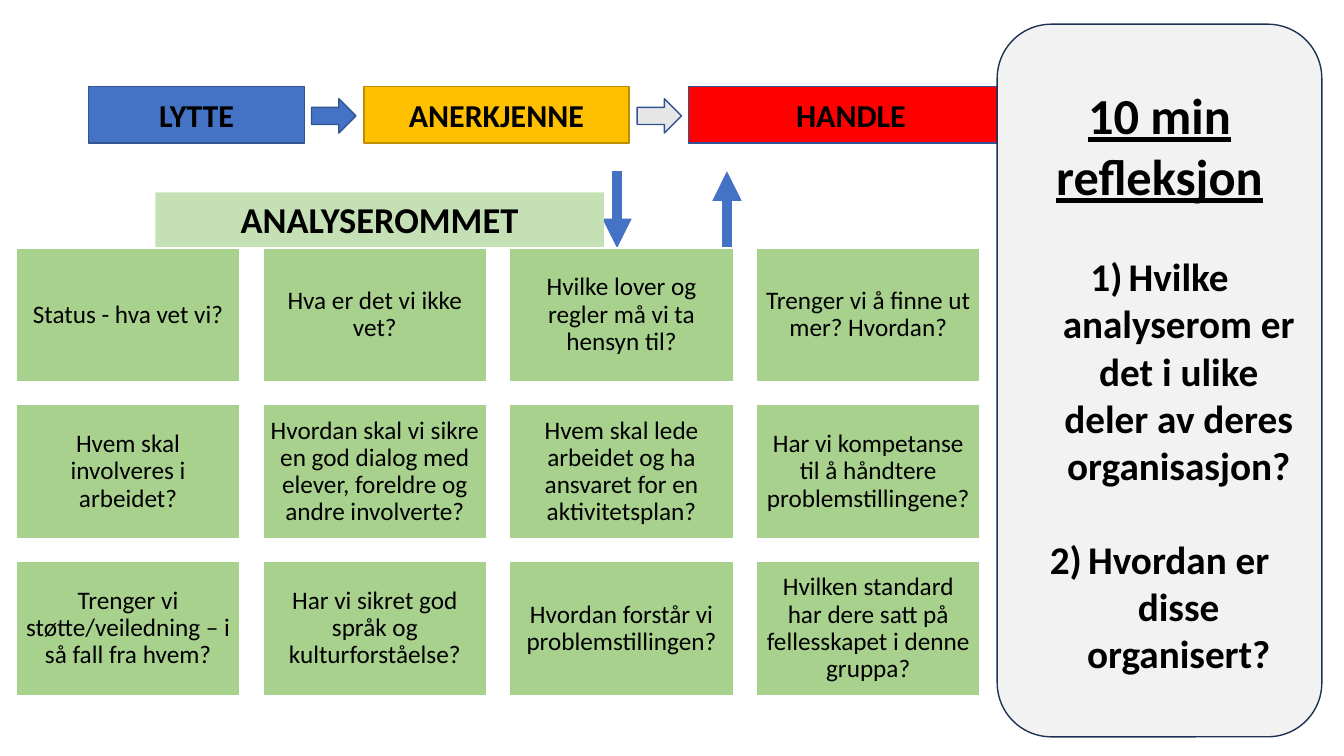
from dataclasses import dataclass

from lxml import etree
from pptx import Presentation
from pptx import util as u
from pptx.dml.color import RGBColor
from pptx.enum import shapes, text
from pptx.oxml import ns

BLACK = RGBColor(0x00, 0x00, 0x00)
WHITE = RGBColor(0xFF, 0xFF, 0xFF)
BLUE = RGBColor(0x44, 0x72, 0xC4)
DARK_BLUE = RGBColor(0x32, 0x54, 0x91)
NAVY = RGBColor(0x1E, 0x32, 0x56)
RED = RGBColor(0xFF, 0x00, 0x00)
AMBER = RGBColor(0xFF, 0xC0, 0x00)
DARK_AMBER = RGBColor(0xBD, 0x8E, 0x00)
GREY = RGBColor(0xE7, 0xE6, 0xE6)
PALE_GREY = RGBColor(0xF2, 0xF2, 0xF2)
GREEN = RGBColor(0xA9, 0xD1, 0x8E)
PALE_GREEN = RGBColor(0xC5, 0xE0, 0xB4)
FONT = "Calibri"
KIND = shapes.MSO_SHAPE


@dataclass
class Shape:
    kind: KIND
    left: float
    top: float
    width: float
    height: float
    fill: RGBColor
    line: RGBColor | None = None


@dataclass
class Step:
    label: str
    left: float
    width: float
    fill: RGBColor
    line: RGBColor


@dataclass
class Arrow:
    x: float
    start: float
    end: float


STEPS = [
    Step("LYTTE", 0.88, 2.14, BLUE, DARK_BLUE),
    Step("HANDLE", 6.83, 3.22, RED, DARK_BLUE),
    Step("ANERKJENNE", 3.61, 2.63, AMBER, DARK_AMBER),
]
STEP_ARROWS = [
    Shape(KIND.RIGHT_ARROW, 3.09, 0.98, 0.44, 0.34, BLUE, DARK_BLUE),
    Shape(KIND.RIGHT_ARROW, 6.32, 0.98, 0.44, 0.34, GREY, DARK_BLUE),
]
ROOM_ARROWS = [Arrow(6.12, 1.7, 2.46), Arrow(7.21, 2.46, 1.7)]
QUESTIONS = [
    [
        "Status - hva vet vi?",
        "Hva er det vi ikke vet?",
        "Hvilke lover og regler må vi ta hensyn til?",
        "Trenger vi å finne ut mer? Hvordan?",
    ],
    [
        "Hvem skal involveres i arbeidet?",
        "Hvordan skal vi sikre en god dialog med elever, foreldre og andre involverte?",
        "Hvem skal lede arbeidet og ha ansvaret for en aktivitetsplan?",
        "Har vi kompetanse til å håndtere problemstillingene?",
    ],
    [
        "Trenger vi støtte/veiledning – i så fall fra hvem?",
        "Har vi sikret god språk og kulturforståelse?",
        "Hvordan forstår vi problemstillingen?",
        "Hvilken standard har dere satt på fellesskapet i denne gruppa?",
    ],
]
CARD_LEFT, CARD_TOP = 0.16, 2.46
CARD_WIDTH, CARD_HEIGHT = 2.22, 1.33
COLUMN_STEP, ROW_STEP = 2.447, 1.555
REFLECTIONS = [
    "Hvilke analyserom er det i ulike deler av deres organisasjon?",
    "Hvordan er disse organisert?",
]


def add_box(page, shape: Shape):
    box = page.shapes.add_shape(
        shape.kind, *map(u.Inches, (shape.left, shape.top, shape.width, shape.height))
    )
    box.shadow.inherit = False
    box.fill.solid()
    box.fill.fore_color.rgb = shape.fill
    if shape.line is None:
        box.line.fill.background()
    else:
        box.line.color.rgb = shape.line
        box.line.width = u.Pt(1)
    return box


def write(box, words: str, *, size: float, bold: bool = False, underline: bool = False,
          spacing: float = 1.0, before: float = 0, numbered: bool = False) -> None:
    """Fill the first paragraph of the box, or add one after existing text."""
    frame = box.text_frame
    frame.word_wrap = True
    para = frame.add_paragraph() if frame.text else frame.paragraphs[0]
    para.alignment = text.PP_ALIGN.CENTER
    para.line_spacing = spacing
    if before:
        para.space_before = u.Pt(before)
    if numbered:
        properties = para._p.get_or_add_pPr()
        properties.set("marL", str(u.Inches(0.38)))
        properties.set("indent", str(u.Inches(-0.38)))
        etree.SubElement(properties, ns.qn("a:buFont"), typeface="+mj-lt")
        etree.SubElement(properties, ns.qn("a:buAutoNum"), type="arabicParenR")
    span = para.add_run()
    span.text = words
    span.font.name = FONT
    span.font.size = u.Pt(size)
    span.font.bold = bold
    span.font.underline = underline
    span.font.color.rgb = BLACK


def add_arrow(page, arrow: Arrow) -> None:
    x = u.Inches(arrow.x)
    line = page.shapes.add_connector(
        shapes.MSO_CONNECTOR.STRAIGHT, x, u.Inches(arrow.start), x, u.Inches(arrow.end)
    )
    line.line.color.rgb = BLUE
    line.line.width = u.Pt(7)
    etree.SubElement(line.line._get_or_add_ln(), ns.qn("a:tailEnd"), type="triangle")
    etree.SubElement(line._element.spPr, ns.qn("a:effectLst"))


def add_steps(page) -> None:
    for step in STEPS:
        box = add_box(page, Shape(KIND.FLOWCHART_PROCESS, step.left, 0.86, step.width,
                                  0.56, step.fill, step.line))
        write(box, step.label, size=22.8, bold=True)
    for arrow in STEP_ARROWS:
        add_box(page, arrow)


def add_question_grid(page) -> None:
    for row, questions in enumerate(QUESTIONS):
        for column, question in enumerate(questions):
            card = add_box(page, Shape(
                KIND.RECTANGLE, CARD_LEFT + column * COLUMN_STEP, CARD_TOP + row * ROW_STEP,
                CARD_WIDTH, CARD_HEIGHT, GREEN, WHITE))
            frame = card.text_frame
            frame.margin_left = frame.margin_right = u.Inches(0.07)
            frame.margin_top = frame.margin_bottom = u.Inches(0.07)
            write(card, question, size=18, spacing=0.9)


def add_room_title(page) -> None:
    title = add_box(page, Shape(KIND.RECTANGLE, 1.54, 1.91, 4.45, 0.54, PALE_GREEN))
    title.text_frame.vertical_anchor = text.MSO_ANCHOR.TOP
    title.text_frame.auto_size = text.MSO_AUTO_SIZE.SHAPE_TO_FIT_TEXT
    write(title, "ANALYSEROMMET", size=26, bold=True)


def add_reflection_panel(page) -> None:
    panel = add_box(page, Shape(KIND.ROUNDED_RECTANGLE, 9.89, 0.24, 3.22, 7.07,
                                PALE_GREY, NAVY))
    write(panel, "10 min refleksjon", size=36, bold=True, underline=True)
    for reflection in REFLECTIONS:
        write(panel, reflection, size=28, bold=True, before=34, numbered=True)


def main() -> None:
    deck = Presentation()
    deck.slide_width, deck.slide_height = u.Inches(13.33), u.Inches(7.5)
    page = deck.slides.add_slide(deck.slide_layouts[6])
    add_steps(page)
    for arrow in ROOM_ARROWS:
        add_arrow(page, arrow)
    add_question_grid(page)
    add_room_title(page)
    add_reflection_panel(page)
    deck.save("out.pptx")


if __name__ == "__main__":
    main()
